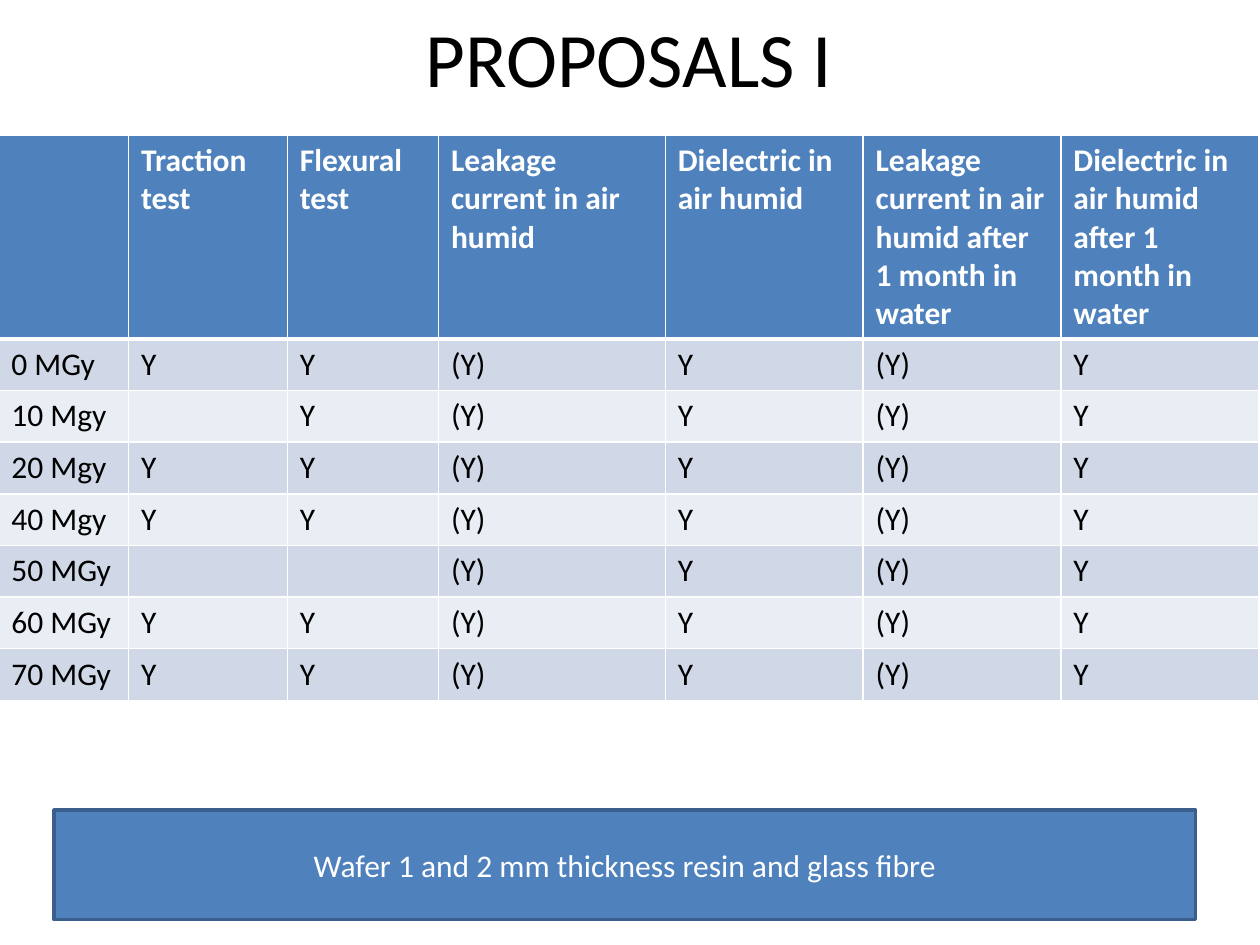
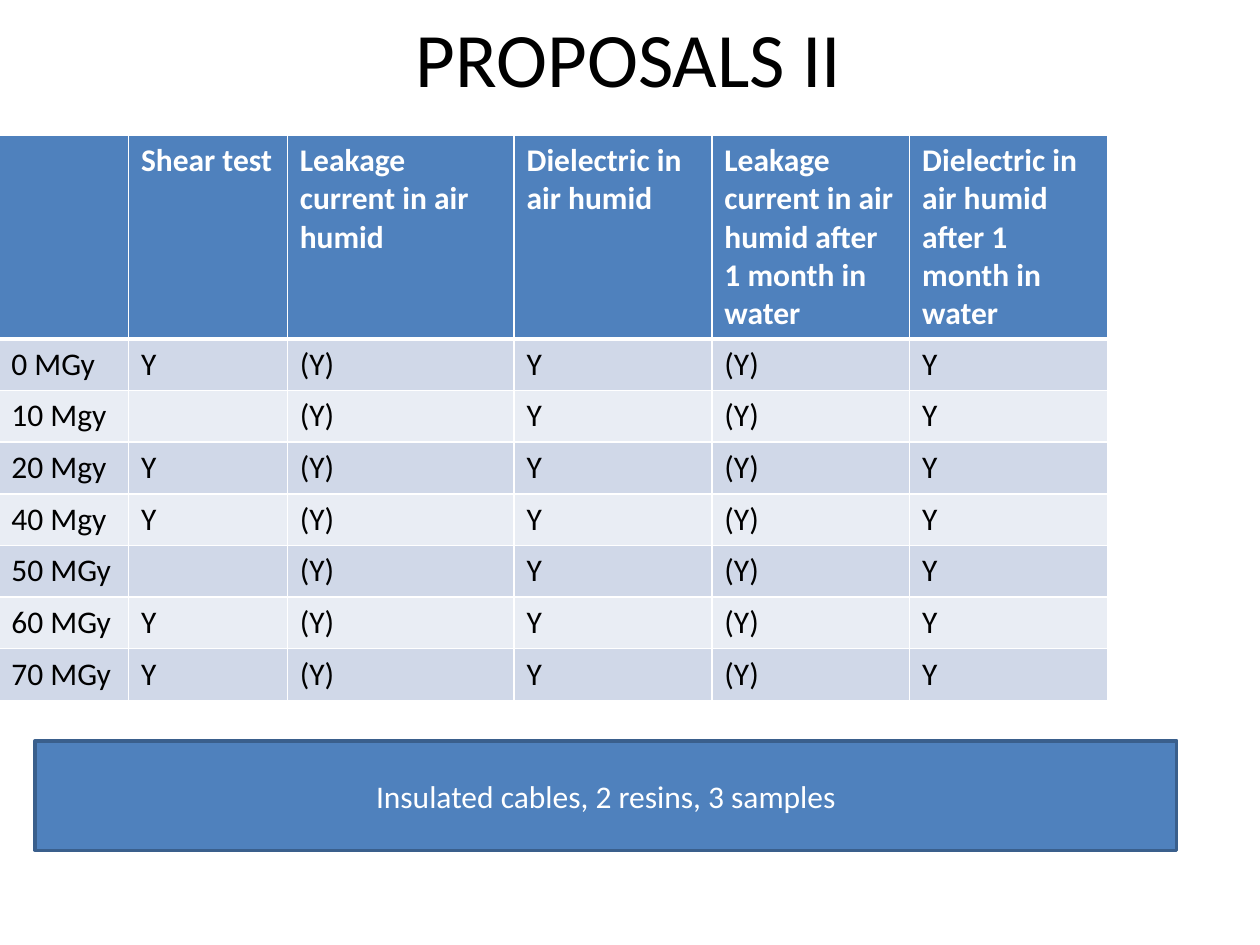
import pptx
import pptx.dml.color
import pptx.enum.shapes
import pptx.enum.text
import pptx.oxml
import pptx.oxml.ns
import pptx.util
from dataclasses import dataclass

Inches, Pt = pptx.util.Inches, pptx.util.Pt
ALIGN = pptx.enum.text.PP_ALIGN
MIDDLE = pptx.enum.text.MSO_ANCHOR.MIDDLE

# Content: each test has a heading, a column width, a mark and the doses it skips
DOSES = ["0 MGy", "10 Mgy", "20 Mgy", "40 Mgy", "50 MGy", "60 MGy", "70 MGy"]
HUMID_TESTS = [
    ("Leakage current in air humid", 1.8, "(Y)", ()),
    ("Dielectric in air humid", 1.57, "Y", ()),
    ("Leakage current in air humid after 1 month in water", 1.57, "(Y)", ()),
    ("Dielectric in air humid after 1 month in water", 1.57, "Y", ()),
]
PROPOSALS = [
    {
        "title": "PROPOSALS I",
        "tests": [
            ("Traction test", 1.26, "Y", ("10 Mgy", "50 MGy")),
            ("Flexural test", 1.2, "Y", ("50 MGy",)),
            *HUMID_TESTS,
        ],
        "note": "Wafer 1 and 2 mm thickness resin and glass fibre",
        "note_at": (0.43, 6.43),
    },
    {
        "title": "PROPOSALS II",
        "tests": [
            ("Shear test", 1.26, "Y", ("10 Mgy", "50 MGy")),
            *HUMID_TESTS,
        ],
        "note": "Insulated cables, 2 resins, 3 samples",
        "note_at": (0.28, 5.88),
    },
]


@dataclass(frozen=True)
class Theme:
    font: str = "Calibri"
    black: str = "000000"
    white: str = "FFFFFF"
    accent: str = "4F81BD"
    outline: str = "3A5F8C"
    bands: tuple = ("D0D8E8", "E9EDF4")
    title_size: int = 44
    body_size: int = 18
    rule: int = 1
    header_rule: int = 3


THEME = Theme()

# Layout in inches
TITLE_BOX = (0.49, -0.01, 9, 0.92)
TABLE_AT = (-0.01, 1.07)
DOSE_WIDTH = 1.03
HEADER_HEIGHT, ROW_HEIGHT = 1.62, 0.41
NOTE_SIZE = (9.06, 0.87)


def rgb(colour):
    return pptx.dml.color.RGBColor.from_string(colour)


def write(frame, text, size=THEME.body_size, colour=THEME.black, bold=False,
          align=ALIGN.LEFT, anchor=None):
    """Put one formatted paragraph into a text frame."""
    frame.word_wrap = True
    if anchor is not None:
        frame.vertical_anchor = anchor
    para = frame.paragraphs[0]
    para.alignment = align
    para.font.size = Pt(size)
    if text:
        span = para.add_run()
        span.text = text
        span.font.name = THEME.font
        span.font.size = Pt(size)
        span.font.bold = bold
        span.font.color.rgb = rgb(colour)


def style_cell(cell, fill, top, bottom):
    """Give a cell its white borders, then its fill."""
    properties = cell._tc.get_or_add_tcPr()
    sides = {"L": THEME.rule, "R": THEME.rule, "T": top, "B": bottom}
    for side, width in sides.items():
        properties.append(pptx.oxml.parse_xml(
            f'<a:ln{side} {pptx.oxml.ns.nsdecls("a")} w="{Pt(width)}">'
            f'<a:solidFill><a:srgbClr val="{THEME.white}"/></a:solidFill>'
            f'</a:ln{side}>'))
    cell.fill.solid()
    cell.fill.fore_color.rgb = rgb(fill)


def add_title(page, text):
    box = page.shapes.add_textbox(*map(Inches, TITLE_BOX))
    write(box.text_frame, text, size=THEME.title_size, align=ALIGN.CENTER, anchor=MIDDLE)


def add_test_table(page, tests):
    rows = [[""] + [heading for heading, *_ in tests]]
    for dose in DOSES:
        rows.append([dose] + ["" if dose in skipped else mark
                              for _, _, mark, skipped in tests])
    widths = [DOSE_WIDTH] + [width for _, width, *_ in tests]
    heights = [HEADER_HEIGHT] + [ROW_HEIGHT] * len(DOSES)
    frame = page.shapes.add_table(
        len(rows), len(widths), *map(Inches, (*TABLE_AT, sum(widths), sum(heights))))
    table = frame.table
    for column, width in zip(table.columns, widths):
        column.width = Inches(width)

    for r, values in enumerate(rows):
        table.rows[r].height = Inches(heights[r])
        header = r == 0
        fill = THEME.accent if header else THEME.bands[(r - 1) % 2]
        top = THEME.header_rule if r == 1 else THEME.rule
        bottom = THEME.header_rule if header else THEME.rule
        for c, value in enumerate(values):
            cell = table.cell(r, c)
            style_cell(cell, fill, top, bottom)
            write(cell.text_frame, value, bold=header,
                  colour=THEME.white if header else THEME.black)


def add_note(page, text, position):
    box = page.shapes.add_shape(pptx.enum.shapes.MSO_SHAPE.RECTANGLE,
                                *map(Inches, position + NOTE_SIZE))
    box.shadow.inherit = False
    box.fill.solid()
    box.fill.fore_color.rgb = rgb(THEME.accent)
    box.line.color.rgb = rgb(THEME.outline)
    box.line.width = Pt(2)
    write(box.text_frame, text, colour=THEME.white, align=ALIGN.CENTER, anchor=MIDDLE)


def main():
    deck = pptx.Presentation()
    deck.slide_width, deck.slide_height = Inches(10), Inches(7.5)
    blank = deck.slide_layouts[6]
    for proposal in PROPOSALS:
        page = deck.slides.add_slide(blank)
        add_title(page, proposal["title"])
        add_test_table(page, proposal["tests"])
        add_note(page, proposal["note"], proposal["note_at"])
    deck.save("out.pptx")


if __name__ == "__main__":
    main()
